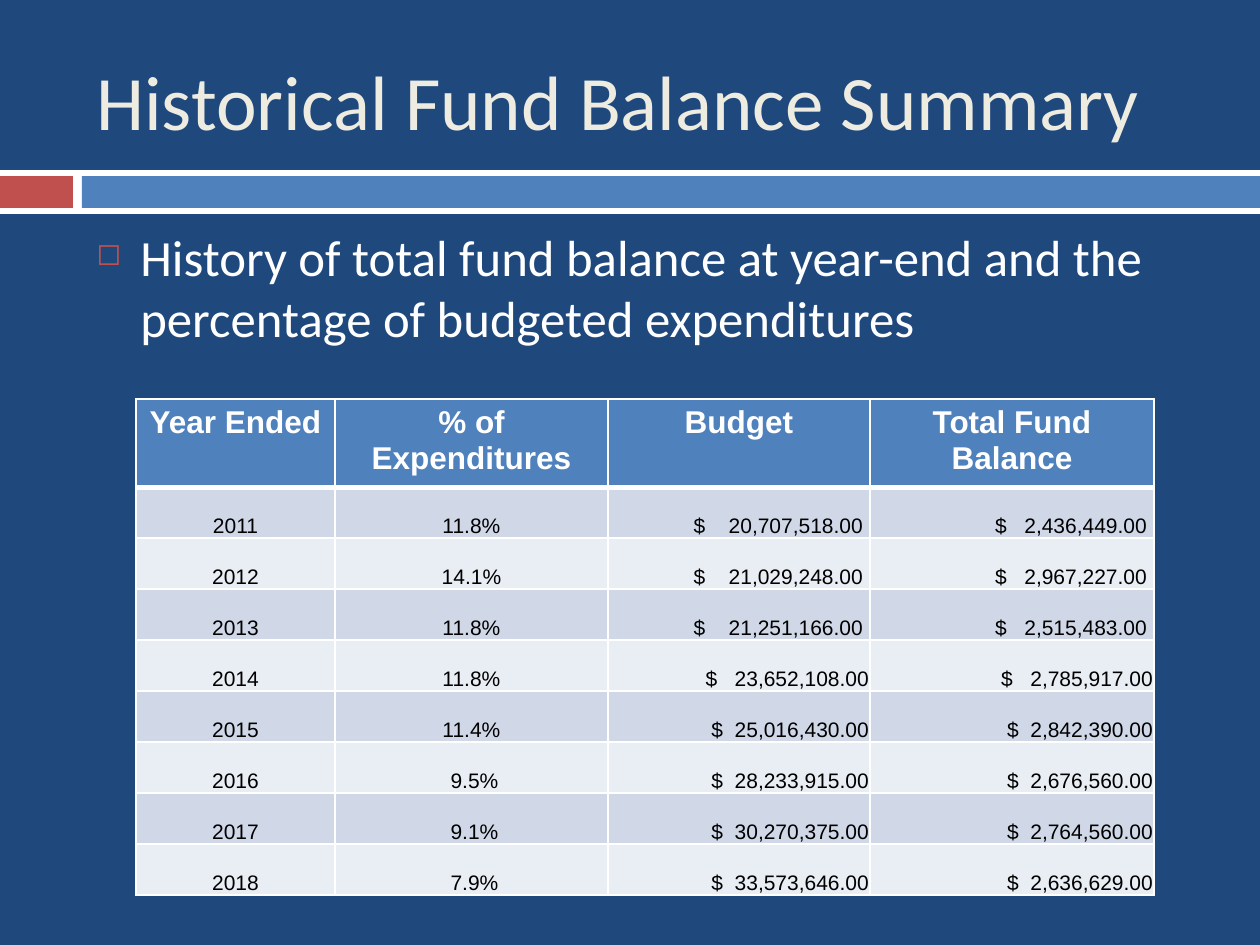
from dataclasses import dataclass
from lxml.etree import SubElement as Sub
from pptx import Presentation
from pptx.dml.color import RGBColor as Rgb
from pptx.enum.shapes import MSO_SHAPE as Shape
from pptx.enum.text import MSO_ANCHOR as Anchor, PP_ALIGN as Align
from pptx.oxml.ns import qn
from pptx.util import Pt


@dataclass(frozen=True)
class Theme:
    back: str = "1F497D"
    white: str = "FFFFFF"
    black: str = "000000"
    cream: str = "EEECE1"
    red: str = "C0504D"
    blue: str = "4F81BD"
    bands: tuple = ("D0D8E8", "E9EDF4")
    text: str = "Calibri"
    grid: str = "Arial"
    title: int = 44
    body: int = 29
    head: int = 18
    cell: int = 12


T = Theme()

# Content
TITLE = "Historical Fund Balance Summary"
POINT = ("History of total fund balance at year-end and the "
         "percentage of budgeted expenditures")
HEADS = ["Year Ended", "% of Expenditures", "Budget", "Total Fund Balance"]
ROWS = [
    ("2011", "11.8%", "20,707,518.00", "2,436,449.00"),
    ("2012", "14.1%", "21,029,248.00", "2,967,227.00"),
    ("2013", "11.8%", "21,251,166.00", "2,515,483.00"),
    ("2014", "11.8%", "23,652,108.00", "2,785,917.00"),
    ("2015", "11.4%", "25,016,430.00", "2,842,390.00"),
    ("2016", "9.5%", "28,233,915.00", "2,676,560.00"),
    ("2017", "9.1%", "30,270,375.00", "2,764,560.00"),
    ("2018", "7.9%", "33,573,646.00", "2,636,629.00"),
]
BARS = [
    (0, 170, 1260, 44, T.white),
    (0, 176, 73, 32, T.red),
    (82, 176, 1178, 32, T.blue),
]

# Layout in px
SCALE = 914400 / 126
COLS = [199, 273, 262, 284]
TABLE = (136, 399)
HEAD_H, ROW_H = 54, 51
INDENT = 44
NUDGE = 6  # extra inset that lines up loose figures


def px(n):
    return round(n * SCALE)


def add_run(para, words, size, color, font, bold=False):
    run = para.add_run()
    run.text = words
    run.font.size, run.font.name, run.font.bold = Pt(size), font, bold
    run.font.color.rgb = Rgb.from_string(color)
    return run


def add_text(slide, box, words, size, color, anchor):
    frame = slide.shapes.add_textbox(*map(px, box)).text_frame
    frame.word_wrap = True
    frame.vertical_anchor = anchor
    para = frame.paragraphs[0]
    add_run(para, words, size, color, T.text)
    return para


def add_bullet(para):
    para.space_before = Pt(7)
    props = para._p.get_or_add_pPr()
    props.set("marL", str(px(INDENT)))
    props.set("indent", str(-px(INDENT)))
    Sub(Sub(props, qn("a:buClr")), qn("a:srgbClr"), val=T.red)
    Sub(props, qn("a:buSzPct"), val="60000")
    Sub(props, qn("a:buChar"), char="◻")


def style_cell(cell, fill, top=1, base=1):
    props = cell._tc.get_or_add_tcPr()
    for side, width in zip("LRTB", (1, 1, top, base)):
        line = Sub(props, qn(f"a:ln{side}"), w=str(Pt(width)))
        Sub(Sub(line, qn("a:solidFill")), qn("a:srgbClr"), val=T.white)
    cell.fill.solid()
    cell.fill.fore_color.rgb = Rgb.from_string(fill)


def gap_size(row, col):
    """Points added between the dollar sign and the figure."""
    if row < 3:
        return 10 if col == 2 else 6.67
    return 6.67 if row == 3 else 3.33


def fill_cell(cell, row, col, words):
    cell.vertical_anchor = Anchor.BOTTOM
    cell.margin_left = cell.margin_right = cell.margin_top = px(1)
    cell.margin_bottom = 0
    para = cell.text_frame.paragraphs[0]
    look = (T.cell, T.black, T.grid)
    if col < 2:
        para.alignment = Align.CENTER
        if col == 1 and len(words) < 5:
            cell.margin_left = px(1 + NUDGE)
    else:
        para.alignment = Align.RIGHT
        if row < 3:
            cell.margin_right = px(1 + NUDGE)
        add_run(para, "$", *look)
        gap = add_run(para, " ", *look)
        gap.font._element.set("spc", str(round(gap_size(row, col) * 100)))
    add_run(para, words, *look)


def add_grid(slide):
    size = (sum(COLS), HEAD_H + ROW_H * len(ROWS))
    table = slide.shapes.add_table(
        len(ROWS) + 1, len(COLS), *map(px, TABLE + size)).table
    for col, width in zip(table.columns, COLS):
        col.width = px(width)
    for i, row in enumerate(table.rows):
        row.height = px(ROW_H if i else HEAD_H)
    # Header
    for col, words in enumerate(HEADS):
        cell = table.cell(0, col)
        style_cell(cell, T.blue, base=3)
        para = cell.text_frame.paragraphs[0]
        para.alignment = Align.CENTER
        add_run(para, words, T.head, T.white, T.grid, True)
    # Years
    for row, values in enumerate(ROWS):
        for col, words in enumerate(values):
            cell = table.cell(row + 1, col)
            style_cell(cell, T.bands[row % 2], top=1 if row else 3)
            fill_cell(cell, row, col, words)


def main():
    deck = Presentation()
    deck.slide_width, deck.slide_height = px(1260), px(945)
    slide = deck.slides.add_slide(deck.slide_layouts[6])
    slide.background.fill.solid()
    slide.background.fill.fore_color.rgb = Rgb.from_string(T.back)
    # Bars under the title
    for *box, color in BARS:
        bar = slide.shapes.add_shape(Shape.RECTANGLE, *map(px, box))
        bar.shadow.inherit = False
        bar.fill.solid()
        bar.fill.fore_color.rgb = Rgb.from_string(color)
        bar.line.fill.background()
    # Text
    add_text(slide, (84, 32, 1124, 136), TITLE, T.title, T.cream, Anchor.MIDDLE)
    add_bullet(add_text(slide, (84, 220, 1124, 620), POINT, T.body, T.white,
                        Anchor.TOP))
    add_grid(slide)
    deck.save("out.pptx")


if __name__ == "__main__":
    main()
